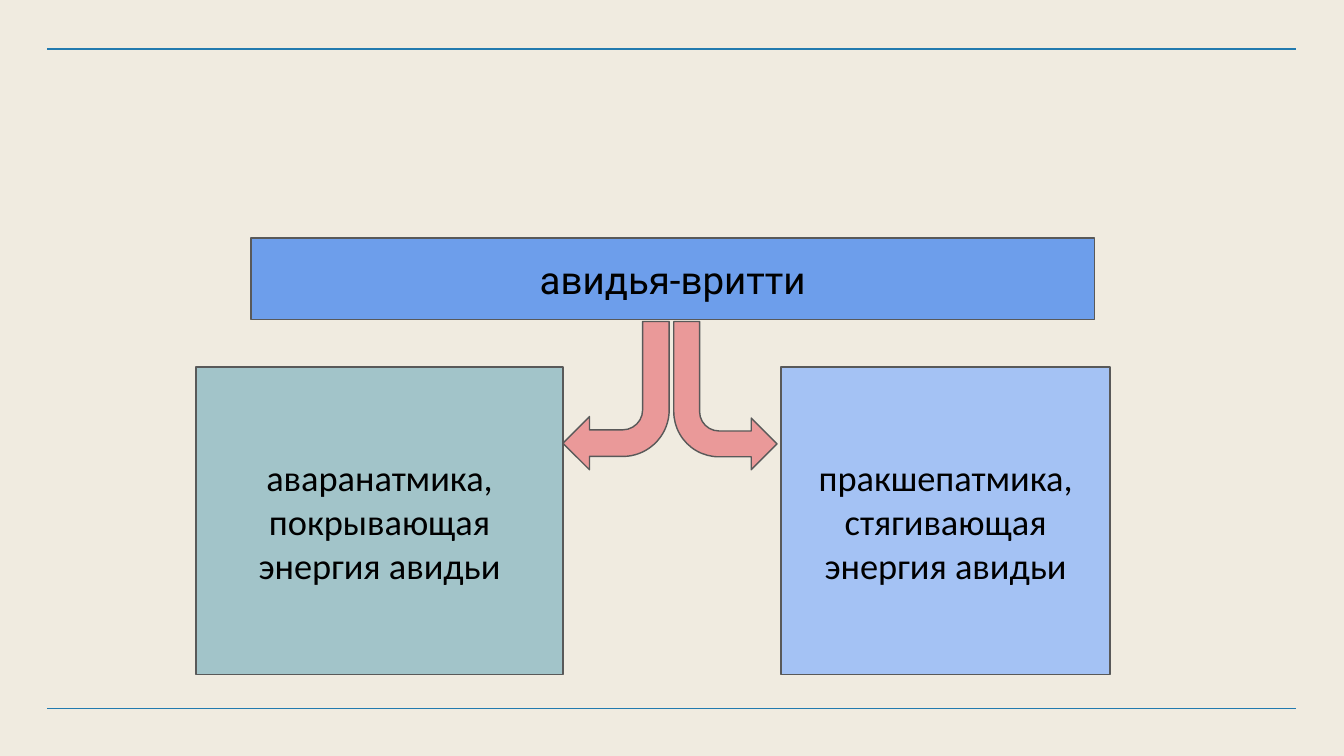
from lxml import etree
from pptx import Presentation
from pptx.dml.color import RGBColor
from pptx.enum.shapes import MSO_CONNECTOR, MSO_SHAPE
from pptx.enum.text import MSO_ANCHOR, PP_ALIGN
from pptx.oxml.ns import qn
from pptx.util import Inches, Pt

RECT, BENT = MSO_SHAPE.RECTANGLE, MSO_SHAPE.BENT_ARROW
LINE = MSO_CONNECTOR.STRAIGHT
MIDDLE, CENTER = MSO_ANCHOR.MIDDLE, PP_ALIGN.CENTER

HUES = {
    "page": "F0EBE0", "rule": "227AAF", "edge": "595959", "ink": "000000",
    "head": "6D9EEB", "arrow": "EA9999", "teal": "A2C4C9", "sky": "A4C2F4",
}


def hue(name):
    return RGBColor.from_string(HUES[name])


class Page:
    """Draws on one slide; lengths are percent of its width and height."""

    def __init__(self, deck):
        self.wide, self.high = deck.slide_width, deck.slide_height
        self.slide = deck.slides.add_slide(deck.slide_layouts[6])
        back = self.slide.background.fill
        back.solid()
        back.fore_color.rgb = hue("page")

    def scale(self, x, y):
        return round(self.wide * x / 100), round(self.high * y / 100)

    def rule(self, y, weight):
        left, right = 3.52, 96.44
        line = self.slide.shapes.add_connector(
            LINE, *self.scale(left, y), *self.scale(right, y))
        line.line.color.rgb = hue("rule")
        line.line.width = Pt(weight)
        etree.SubElement(line.element.spPr, qn("a:effectLst"))

    def shape(self, kind, x, y, w, h, fill):
        shape = self.slide.shapes.add_shape(
            kind, *self.scale(x, y), *self.scale(w, h))
        shape.shadow.inherit = False
        shape.fill.solid()
        shape.fill.fore_color.rgb = hue(fill)
        shape.line.color.rgb = hue("edge")
        shape.line.width = Pt(2)
        return shape

    def box(self, x, y, w, h, fill, text, size, font, before=0):
        frame = self.shape(RECT, x, y, w, h, fill).text_frame
        frame.word_wrap = True
        frame.vertical_anchor = MIDDLE
        frame.margin_left = frame.margin_right = Inches(0.27)
        frame.margin_top = frame.margin_bottom = Inches(0.27)
        para = frame.paragraphs[0]
        para.alignment = CENTER
        para.space_before = Pt(before)
        run = para.add_run()
        run.text = text
        run.font.size = Pt(size)
        run.font.name = font
        run.font.color.rgb = hue("ink")

    def arrow(self, x, w, flip=False):
        """Arrow going down from the heading, then left, or right if flipped."""
        arrow = self.shape(BENT, x, 42.53, w, 19.6, "arrow")
        arrow.rotation = 180
        if flip:
            arrow.element.spPr.find(qn("a:xfrm")).set("flipH", "1")


def main():
    deck = Presentation()
    deck.slide_width, deck.slide_height = Inches(26.67), Inches(15)
    page = Page(deck)

    page.rule(6.47, 4)
    page.rule(93.73, 1)

    page.box(18.67, 31.47, 62.77, 10.8, "head", "авидья-вритти", 55, "Roboto")
    page.arrow(41.88, 7.91)
    page.arrow(50.13, 7.69, flip=True)

    powers = [
        (14.59, 27.3, "teal", "аваранатмика, покрывающая энергия авидьи"),
        (58.12, 24.48, "sky", "пракшепатмика, стягивающая энергия авидьи"),
    ]
    for x, w, fill, text in powers:
        page.box(x, 48.53, w, 40.73, fill, text, 52, "Calibri", before=10)

    deck.save("out.pptx")


if __name__ == "__main__":
    main()
